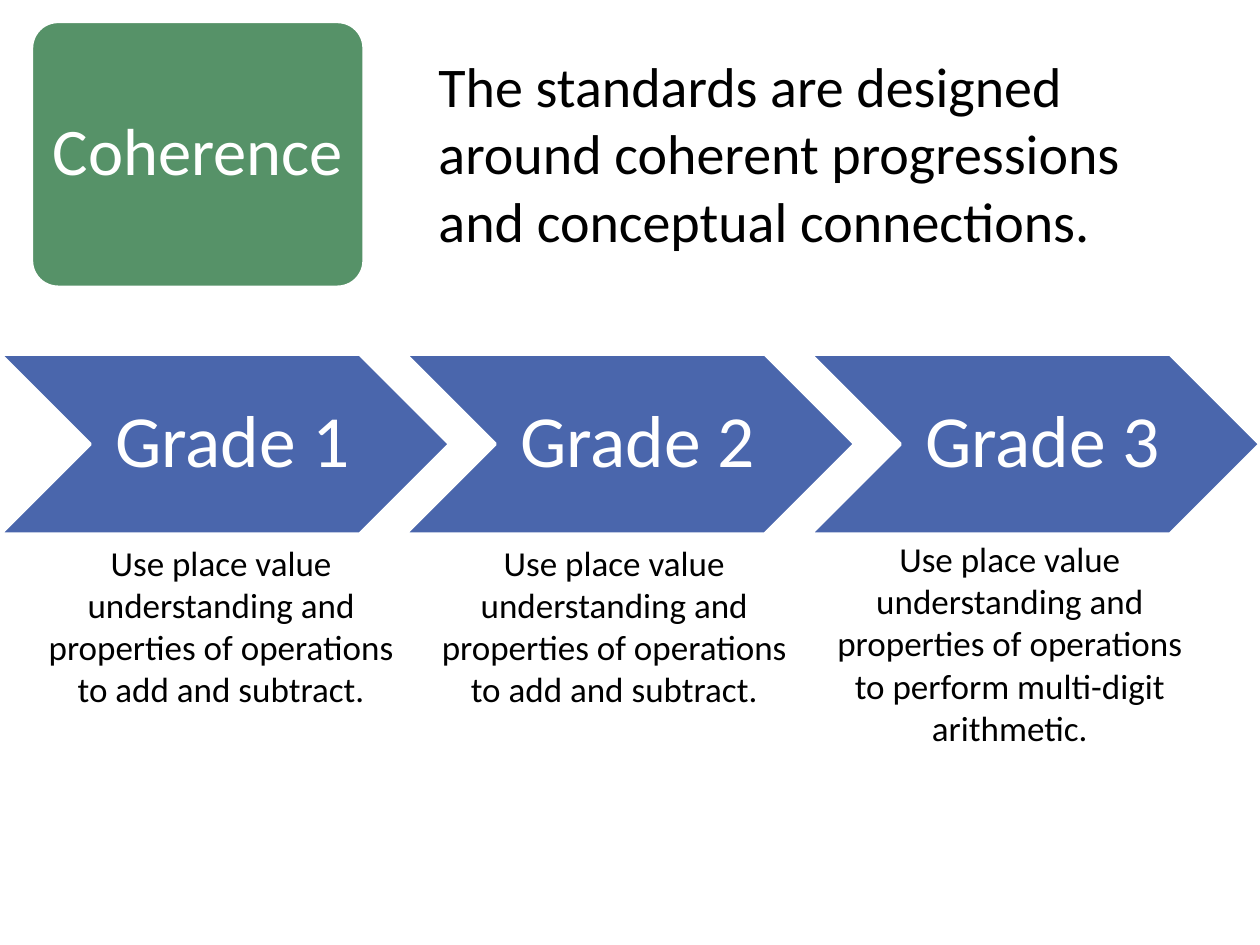
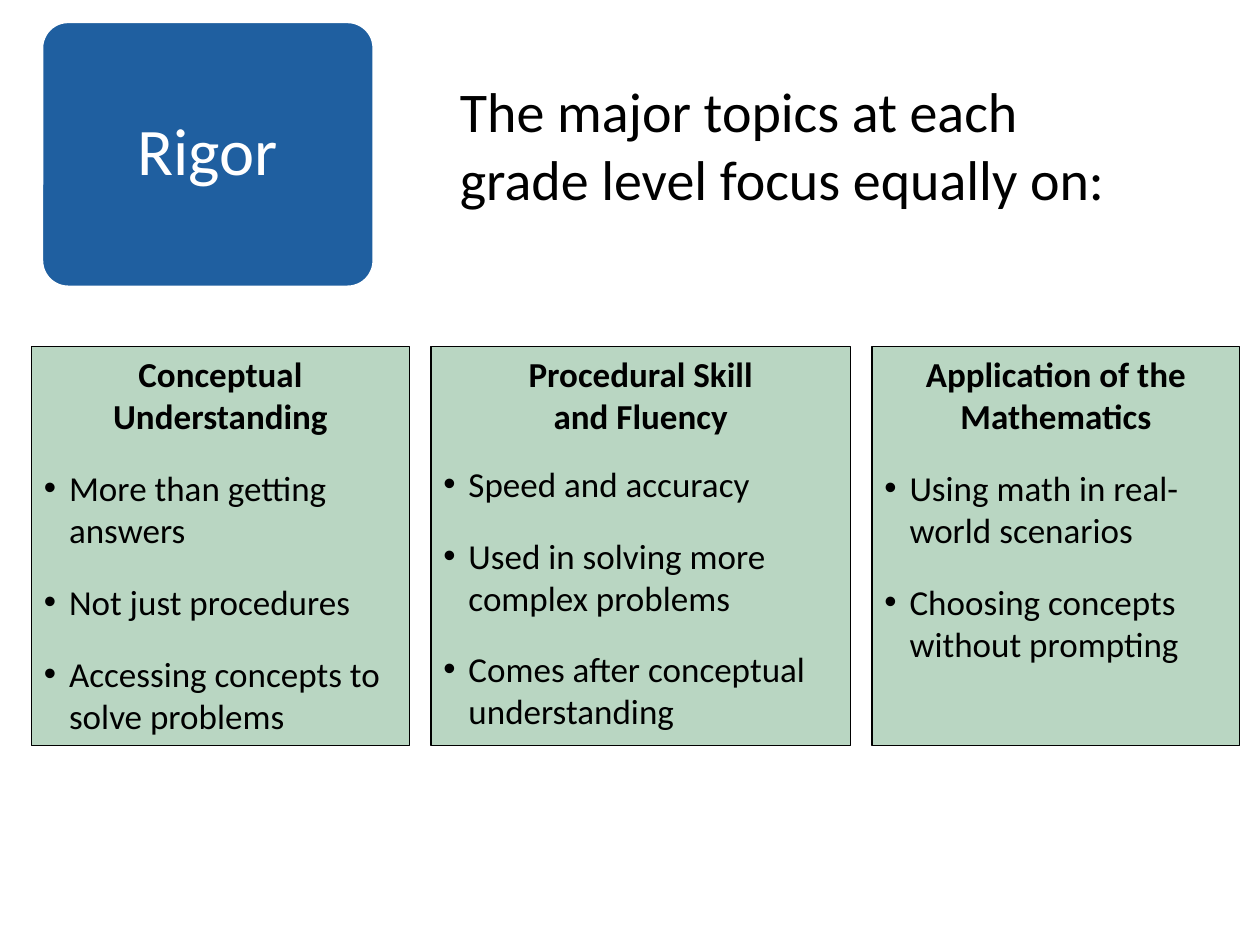
from lxml.etree import SubElement
from pptx import Presentation
from pptx.dml.color import RGBColor
from pptx.enum.shapes import MSO_SHAPE
from pptx.enum.text import MSO_ANCHOR, MSO_AUTO_SIZE, PP_ALIGN
from pptx.oxml.ns import qn
from pptx.util import Inches, Pt

# Content
COHERENCE = {
    "label": "Coherence", "fill": "green", "label_left": 0.25,
    "title": "The standards are designed around coherent progressions "
             "and conceptual connections.",
    "title_at": (3.38, 0.36, 5.67, 1.72),
}
RIGOR = {
    "label": "Rigor", "fill": "blue", "label_left": 0.33,
    "title": "The major topics at each grade level focus equally on:",
    "title_at": (3.55, 0.56, 5.64, 1.18),
}
ADD_SUBTRACT = ("Use place value understanding and properties of operations"
                "\vto add and subtract.")
MULTI_DIGIT = ("Use place value understanding and properties of operations "
               "to perform multi-digit arithmetic.")
GRADES = [  # grade, standard, place of the standard
    ("Grade 1", ADD_SUBTRACT, (0.17, 4.25, 3.17, 1.45)),
    ("Grade 2", ADD_SUBTRACT, (3.25, 4.25, 3.25, 1.45)),
    ("Grade 3", MULTI_DIGIT, (6.45, 4.22, 3.13, 1.78)),
]
TOPICS = [  # heading, column width, gap below heading in points, bullets
    ("Conceptual Understanding", 3, 17,
     ["More than getting answers", "Not just procedures",
      "Accessing concepts to solve problems"]),
    ("Procedural Skill\vand Fluency", 3.33, 14.6,
     ["Speed and accuracy", "Used in solving more complex problems",
      "Comes after conceptual understanding"]),
    ("Application of the Mathematics", 2.92, 17,
     ["Using math in real-world scenarios",
      "Choosing concepts without prompting"]),
]

# Shared style
COLORS = {"green": "569268", "blue": "1F5FA0", "indigo": "4A66AC",
          "mint": "B9D6C2", "white": "FFFFFF", "black": "000000"}
FONT = "Calibri"
SLIDE_WIDTH, SLIDE_HEIGHT = 10, 7.5
LABEL_TOP, LABEL_WIDTH, LABEL_HEIGHT = 0.17, 2.64, 2.11
CHEVRON_TOP, CHEVRON_WIDTH, CHEVRON_HEIGHT = 2.81, 3.57, 1.43
TOPIC_LEFT, TOPIC_TOP, TOPIC_HEIGHT, TOPIC_GAP = 0.25, 2.75, 3.17, 0.17
BULLET_GAP, BULLET_INDENT = 17, 0.2


def rgb(name):
    return RGBColor.from_string(COLORS[name])


def set_frame(frame, anchor=MSO_ANCHOR.TOP, insets=(0.1, 0.05, 0.1, 0.05)):
    sides = ("margin_left", "margin_top", "margin_right", "margin_bottom")
    values = {"word_wrap": True, "auto_size": MSO_AUTO_SIZE.NONE,
              "vertical_anchor": anchor,
              **{side: Inches(inset) for side, inset in zip(sides, insets)}}
    for name, value in values.items():
        setattr(frame, name, value)


def write(para, text, size, color="black", bold=False, **formats):
    para.text = text
    for name, value in formats.items():
        setattr(para, name, value)
    for span in para.runs:
        for name, value in {"name": FONT, "size": Pt(size), "bold": bold}.items():
            setattr(span.font, name, value)
        span.font.color.rgb = rgb(color)


def add_box(page, kind, place, fill, line, line_width):
    box = page.shapes.add_shape(kind, *map(Inches, place))
    box.shadow.inherit = False
    box.fill.solid()
    box.fill.fore_color.rgb = rgb(fill)
    box.line.color.rgb = rgb(line)
    box.line.width = Pt(line_width)
    return box


def add_caption(box, text, size, insets):
    set_frame(box.text_frame, MSO_ANCHOR.MIDDLE, insets)
    write(box.text_frame.paragraphs[0], text, size, "white",
          alignment=PP_ALIGN.CENTER, line_spacing=0.9)


def add_bullet(para):
    props = para._p.get_or_add_pPr()
    indent = Inches(BULLET_INDENT)
    props.set("marL", str(indent))
    props.set("indent", str(-indent))
    SubElement(props, qn("a:buFont"), typeface="Arial")
    SubElement(props, qn("a:buChar"), char="•")


def add_page(deck, head):
    """Title-only page with its statement and coloured label."""
    page = deck.slides.add_slide(deck.slide_layouts[5])
    title = page.shapes.title
    sides = ("left", "top", "width", "height")
    for name, value in zip(sides, head["title_at"]):
        setattr(title, name, Inches(value))
    set_frame(title.text_frame)
    write(title.text_frame.paragraphs[0], head["title"], 32,
          alignment=PP_ALIGN.LEFT)
    place = (head["label_left"], LABEL_TOP, LABEL_WIDTH, LABEL_HEIGHT)
    label = add_box(page, MSO_SHAPE.ROUNDED_RECTANGLE, place,
                    head["fill"], "white", 2)
    label.adjustments[0] = 0.1
    add_caption(label, head["label"], 38, (0.05,) * 4)
    return page


def add_grades(page):
    step = (SLIDE_WIDTH - CHEVRON_WIDTH) / (len(GRADES) - 1)
    for index, (grade, standard, place) in enumerate(GRADES):
        chevron = add_box(page, MSO_SHAPE.CHEVRON,
                          (index * step, CHEVRON_TOP, CHEVRON_WIDTH, CHEVRON_HEIGHT),
                          "indigo", "white", 2)
        add_caption(chevron, grade, 42, (0.12, 0.06, 0, 0.06))
        box = page.shapes.add_textbox(*map(Inches, place))
        set_frame(box.text_frame)
        write(box.text_frame.paragraphs[0], standard, 20,
              alignment=PP_ALIGN.CENTER)


def add_topics(page):
    left = TOPIC_LEFT
    for heading, width, heading_gap, bullets in TOPICS:
        box = add_box(page, MSO_SHAPE.RECTANGLE,
                      (left, TOPIC_TOP, width, TOPIC_HEIGHT),
                      "mint", "black", 0.75)
        frame = box.text_frame
        set_frame(frame)
        write(frame.paragraphs[0], heading, 20, bold=True,
              alignment=PP_ALIGN.CENTER)
        for index, bullet in enumerate(bullets):
            para = frame.add_paragraph()
            add_bullet(para)
            gap = BULLET_GAP if index else heading_gap
            write(para, bullet, 20, alignment=PP_ALIGN.LEFT,
                  space_before=Pt(gap))
        left += width + TOPIC_GAP


def main():
    deck = Presentation()
    deck.slide_width = Inches(SLIDE_WIDTH)
    deck.slide_height = Inches(SLIDE_HEIGHT)
    add_grades(add_page(deck, COHERENCE))
    add_topics(add_page(deck, RIGOR))
    deck.save("out.pptx")


if __name__ == "__main__":
    main()
